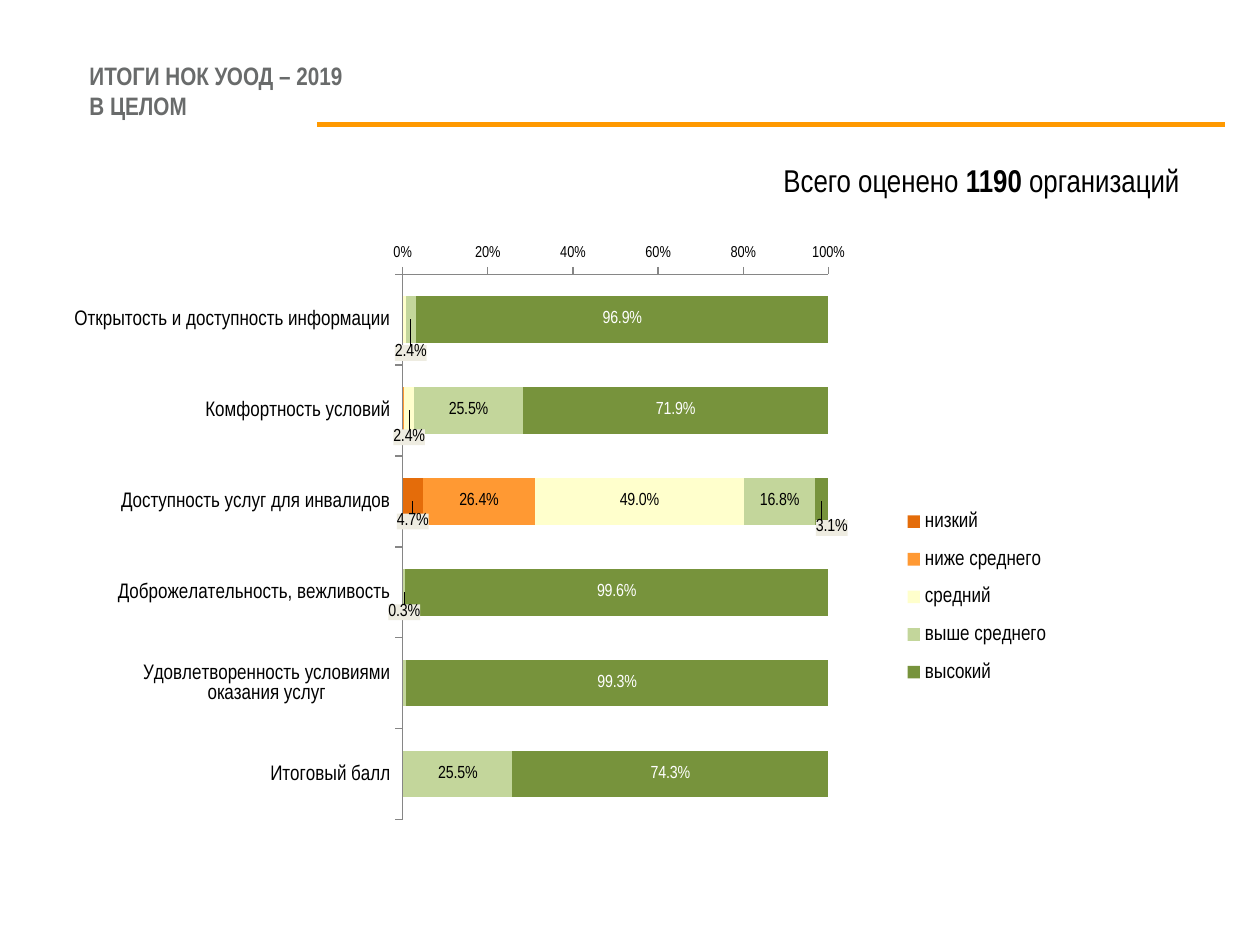
from pptx import Presentation, util as u
from pptx.chart.data import CategoryChartData
from pptx.dml.color import RGBColor
from pptx.enum import chart as ch, shapes, text
from pptx.oxml import parse_xml
from pptx.oxml.ns import nsdecls, qn

CRITERIA = [
    "Открытость и доступность информации",
    "Комфортность условий",
    "Доступность услуг для инвалидов",
    "Доброжелательность, вежливость",
    "Удовлетворенность условиями оказания услуг",
    "Итоговый балл",
]
LEVELS = [
    ("низкий", "E46C0A", [0.002, 0.002, 0.047, 0.002, 0.002, 0.002]),
    ("ниже среднего", "FF9933", [None, 0.001, 0.264, None, None, None]),
    ("средний", "FFFFCC", [0.005, 0.024, 0.49, None, None, None]),
    ("выше среднего", "C3D69B", [0.024, 0.255, 0.168, 0.003, 0.005, 0.255]),
    ("высокий", "77933C", [0.969, 0.719, 0.031, 0.996, 0.993, 0.743]),
]
LABELLED = [[2], [2], [1, 2], [0, 1, 2, 3, 5], range(6)]
CALLOUTS = {(0, 2): (0, 0.03), (2, 1): (0, 0.04), (3, 0): (0, 0.05),
            (3, 3): (0, 0.03), (4, 2): (0.01, 0.04)}


def color(value):
    return RGBColor.from_string(value)


def layout(x, y, w=None, h=None, inner=False):
    parts = '<c:layoutTarget val="inner"/>' if inner else ""
    if w:
        parts += '<c:xMode val="edge"/><c:yMode val="edge"/>'
    for tag, value in zip("xywh", (x, y, w, h)):
        if value is not None:
            parts += f'<c:{tag} val="{value}"/>'
    return parse_xml(f'<c:layout {nsdecls("c")}><c:manualLayout>{parts}</c:manualLayout></c:layout>')


class SlideBuilder:
    font = "Arial Narrow"
    black = "000000"
    axis_gray = "868686"

    def __init__(self, slide):
        self.slide = slide

    def style(self, font, size, ink=black, bold=False):
        font.name = self.font
        font.size = u.Pt(size)
        font.color.rgb = color(ink)
        font.bold = bold

    def run(self, paragraph, words, size, ink=black, bold=False):
        run = paragraph.add_run()
        run.text = words
        self.style(run.font, size, ink, bold)

    def title(self, lines, left, top, width, height):
        title = self.slide.shapes.title
        title.left, title.top = u.Inches(left), u.Inches(top)
        title.width, title.height = u.Inches(width), u.Inches(height)
        title.text_frame.vertical_anchor = text.MSO_ANCHOR.MIDDLE
        heading = title.text_frame.paragraphs[0]
        heading.alignment = text.PP_ALIGN.LEFT
        for index, line in enumerate(lines):
            if index:
                heading.add_line_break()
            self.run(heading, line, 14.4, "696B6B", True)

    def rule(self, left, right, y, ink, weight):
        rule = self.slide.shapes.add_connector(
            shapes.MSO_CONNECTOR.STRAIGHT,
            u.Inches(left), u.Inches(y), u.Inches(right), u.Inches(y))
        rule.line.color.rgb = color(ink)
        rule.line.width = u.Pt(weight)
        rule._element.spPr.append(parse_xml(f'<a:effectLst {nsdecls("a")}/>'))

    def summary(self, parts, left, top, width, height):
        box = self.slide.shapes.add_textbox(
            u.Inches(left), u.Inches(top), u.Inches(width), u.Inches(height))
        box.text_frame.word_wrap = True
        for words, bold in parts:
            self.run(box.text_frame.paragraphs[0], words, 18, bold=bold)

    def axis(self, axis, size):
        axis.has_major_gridlines = False
        axis.major_tick_mark = ch.XL_TICK_MARK.OUTSIDE
        axis.format.line.color.rgb = color(self.axis_gray)
        axis.format.line.width = u.Pt(0.75)
        self.style(axis.tick_labels.font, size)

    def point_label(self, series, index, ink, offset):
        self.style(series.points[index].data_label.font, 10, ink)
        label = series.data_labels._element.xpath(f'c:dLbl[c:idx/@val="{index}"]')[0]
        details = [parse_xml(f'<c:numFmt {nsdecls("c")} formatCode="0.0%" sourceLinked="0"/>')]
        if offset:
            details.insert(0, layout(*offset))
            details.append(parse_xml(
                f'<c:spPr {nsdecls("c", "a")}><a:solidFill><a:srgbClr val="EEECE1"/>'
                '</a:solidFill></c:spPr>'))
            for old in label.findall(qn("c:spPr")):
                label.remove(old)
        for place, detail in enumerate(details, 1):
            label.insert(place, detail)

    def ratings(self, left, top, width, height):
        data = CategoryChartData(number_format="0.0%")
        data.categories = CRITERIA
        for name, _, shares in LEVELS:
            data.add_series(name, shares)
        chart = self.slide.shapes.add_chart(
            ch.XL_CHART_TYPE.BAR_STACKED, u.Inches(left), u.Inches(top),
            u.Inches(width), u.Inches(height), data).chart
        chart.has_title = False
        self.style(chart.font, 10)

        criteria, shares = chart.category_axis, chart.value_axis
        self.axis(criteria, 12)
        criteria.reverse_order = True
        criteria.crosses = ch.XL_AXIS_CROSSES.MAXIMUM
        self.axis(shares, 9)
        shares.minimum_scale, shares.maximum_scale = 0, 1
        shares.major_unit = 0.2
        shares.tick_labels.number_format = "0%"
        shares.tick_labels.number_format_is_linked = False

        plot = chart.plots[0]
        plot.gap_width, plot.overlap = 96, 100
        plot.vary_by_categories = False
        for level, series in enumerate(plot.series):
            series.format.fill.solid()
            series.format.fill.fore_color.rgb = color(LEVELS[level][1])
            series.data_labels.show_value = False
            for index in LABELLED[level]:
                offset = CALLOUTS.get((level, index))
                ink = "FFFFFF" if level == 4 and not offset else self.black
                self.point_label(series, index, ink, offset)

        area = chart._chartSpace.chart.plotArea
        for old in area.findall(qn("c:layout")):
            area.remove(old)
        area.insert(0, layout(0.32, 0.06, 0.43, 0.82, inner=True))
        chart.has_legend = True
        legend = chart.legend
        legend.position = ch.XL_LEGEND_POSITION.RIGHT
        legend.include_in_layout = False
        self.style(legend.font, 12)
        for old in legend._element.findall(qn("c:layout")):
            legend._element.remove(old)
        legend._element.find(qn("c:legendPos")).addnext(layout(0.81, 0.39, 0.18, 0.31))


def main():
    deck = Presentation()
    deck.slide_width, deck.slide_height = u.Inches(10), u.Inches(7.5)
    builder = SlideBuilder(deck.slides.add_slide(deck.slide_layouts[5]))
    builder.title(["ИТОГИ НОК УООД – 2019", "В ЦЕЛОМ"], 0.61, 0.43, 9, 0.57)
    builder.rule(2.52, 9.72, 0.99, "FF9900", 3)
    builder.ratings(0.59, 1.86, 7.95, 5.28)
    builder.summary([("Всего оценено ", False), ("1190 ", True), ("организаций", False)],
                    6.12, 1.23, 3.7, 0.4)
    deck.save("out.pptx")


if __name__ == "__main__":
    main()
